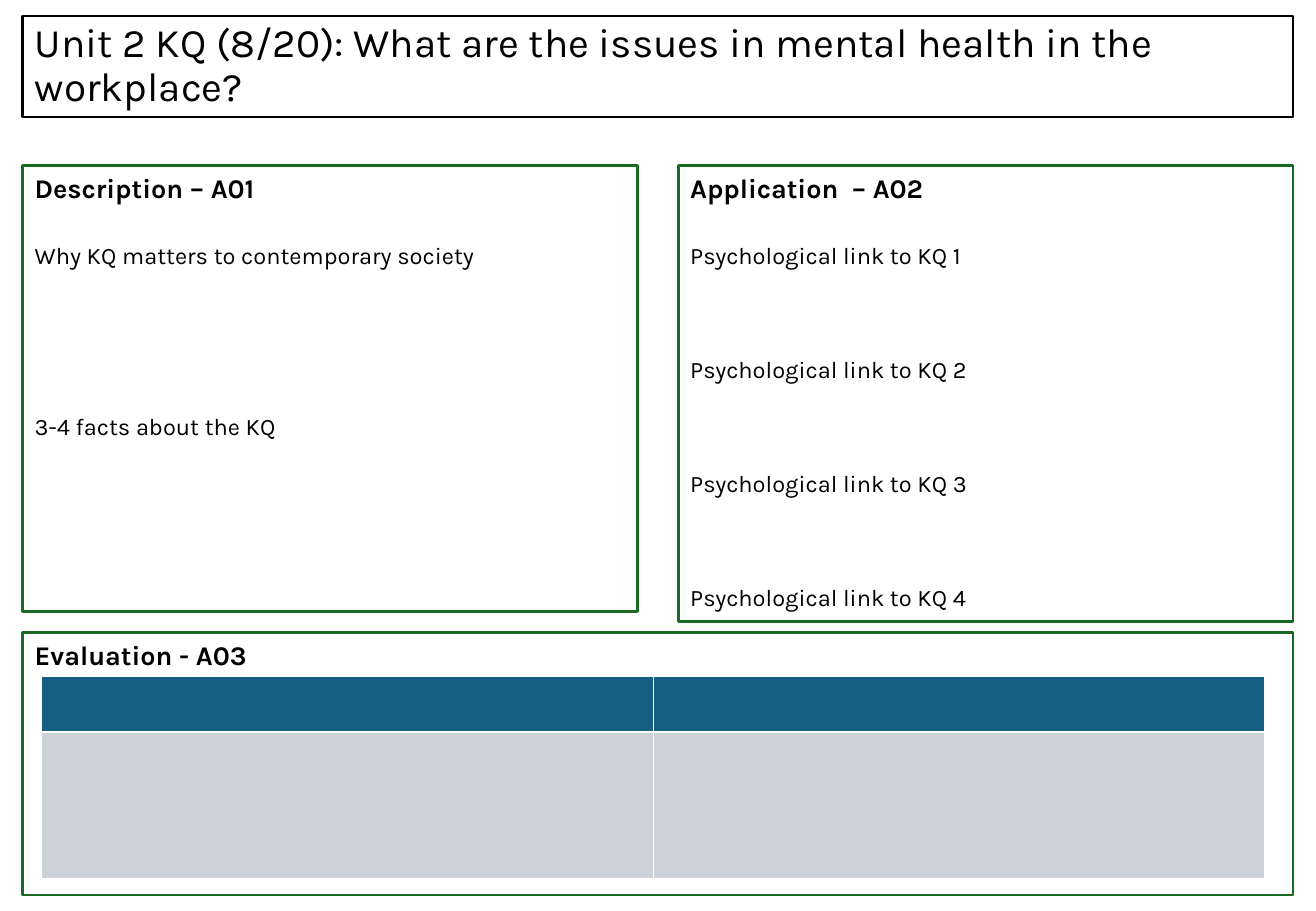
import pptx
import pptx.util
import pptx.dml.color
import pptx.enum.shapes
import pptx.enum.text
from dataclasses import dataclass

Pt = pptx.util.Pt
Color = pptx.dml.color.RGBColor.from_string


@dataclass(frozen=True)
class Theme:
    font: str = "Karla"
    ink: str = "000000"
    paper: str = "FFFFFF"
    green: str = "196B24"
    header: str = "156082"
    body: str = "CCD2D8"
    title_size: int = 24
    heading_size: int = 16
    prompt_size: int = 14
    border: float = 1.5


theme = Theme()


def write(para, text, size=theme.prompt_size, bold=False, before=0, spacing=1.0):
    para.alignment = pptx.enum.text.PP_ALIGN.LEFT
    para.space_before = Pt(before)
    para.line_spacing = spacing
    span = para.add_run()
    span.text = text
    span.font.name = theme.font
    span.font.size = Pt(size)
    span.font.bold = bold
    span.font.color.rgb = Color(theme.ink)


def frame(box, left, top, width, height, line, anchor):
    box.left, box.top, box.width, box.height = Pt(left), Pt(top), Pt(width), Pt(height)
    box.fill.solid()
    box.fill.fore_color.rgb = Color(theme.paper)
    box.line.color.rgb = Color(line)
    box.line.width = Pt(theme.border)
    box.text_frame.word_wrap = True
    box.text_frame.auto_size = pptx.enum.text.MSO_AUTO_SIZE.NONE
    box.text_frame.vertical_anchor = anchor


deck = pptx.Presentation()
deck.slide_width, deck.slide_height = Pt(780), Pt(540)
page = deck.slides.add_slide(deck.slide_layouts[5])

margin = 13.5
full_width = 780 - 2 * margin
half_width = 364.5
right_column = 780 - margin - half_width

title = page.shapes.title
frame(title, margin, 9.5, full_width, 60, theme.ink, pptx.enum.text.MSO_ANCHOR.MIDDLE)
write(
    title.text_frame.paragraphs[0],
    "Unit 2 KQ (8/20): What are the issues in mental health in the workplace?",
    size=theme.title_size,
    spacing=0.9,
)

heading_gap = 22
description_prompts = ["Why KQ matters to contemporary society", "3-4 facts about the KQ"]
application_prompts = [f"Psychological link to KQ {number}" for number in range(1, 5)]
sections = [
    ("Description – A01", margin, 98, half_width, 264.5, description_prompts, 84.5),
    ("Application  – A02", right_column, 98, half_width, 270.5, application_prompts, 50.8),
    ("Evaluation - A03", margin, 375, full_width, 155.5, [], 0),
]
for heading, left, top, width, height, prompts, prompt_gap in sections:
    box = page.shapes.add_shape(pptx.enum.shapes.MSO_SHAPE.RECTANGLE, 0, 0, 0, 0)
    box.shadow.inherit = False
    frame(box, left, top, width, height, theme.green, pptx.enum.text.MSO_ANCHOR.TOP)
    write(box.text_frame.paragraphs[0], heading, size=theme.heading_size, bold=True)
    for index, prompt in enumerate(prompts):
        write(
            box.text_frame.add_paragraph(),
            prompt,
            before=prompt_gap if index else heading_gap,
        )

row_heights = [33, 87]
grid = page.shapes.add_table(2, 2, Pt(24.75), Pt(401), Pt(725), Pt(sum(row_heights))).table
for row, height, fill in zip(grid.rows, row_heights, [theme.header, theme.body]):
    row.height = Pt(height)
    for cell in row.cells:
        cell.fill.solid()
        cell.fill.fore_color.rgb = Color(fill)

deck.save("out.pptx")
